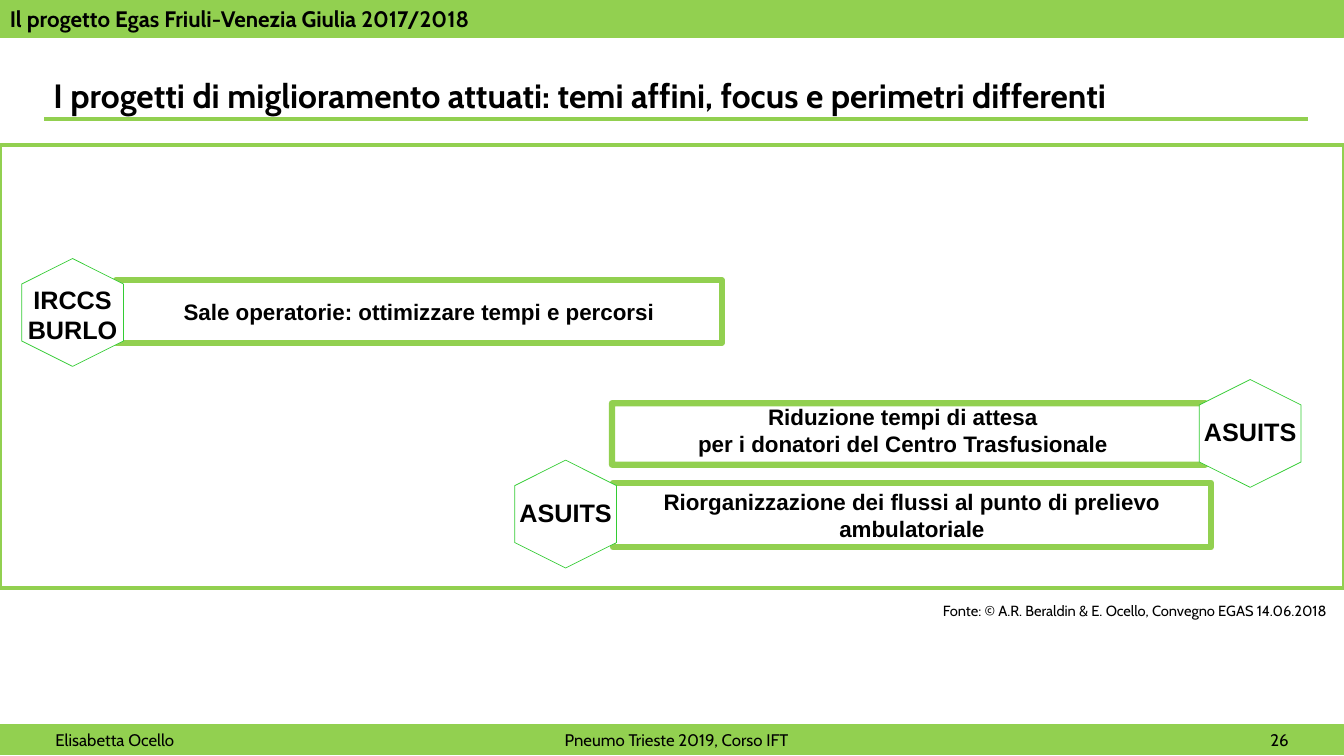
from lxml.etree import SubElement
from pptx import Presentation
from pptx.dml.color import RGBColor
from pptx.enum.shapes import MSO_CONNECTOR, MSO_SHAPE
from pptx.enum.text import MSO_ANCHOR, PP_ALIGN
from pptx.oxml.ns import qn
from pptx.util import Inches, Pt

GREEN = RGBColor(0x92, 0xD0, 0x50)
HEX_GREEN = RGBColor(0x33, 0xCC, 0x33)
WHITE = RGBColor(0xFF, 0xFF, 0xFF)
BLACK = RGBColor(0, 0, 0)

WIDTH, HEIGHT = 13.33, 7.5

# Content
HEADER = "Il progetto Egas Friuli-Venezia Giulia 2017/2018"
TITLE = "I progetti di miglioramento attuati: temi affini, focus e perimetri differenti"
SOURCE = "Fonte: © A.R. Beraldin & E. Ocello, Convegno EGAS 14.06.2018"
FOOTER = ["Elisabetta Ocello", "Pneumo Trieste 2019, Corso IFT", "26"]
FOOTER_COLUMNS = [0.55, 5.6, 12.6]

# Each project: outline, its box, text lines, text box,
# owner lines, hexagon centre, shift of the owner label
PROJECTS = [
    (MSO_SHAPE.PENTAGON, (6.07, 4, 6.19, 0.61),
     ["Riduzione tempi di attesa", "per i donatori del Centro Trasfusionale"],
     (5.96, 3.95, 5.99, 0.64), ["ASUITS"], (12.4, 4.3), -0.02),
    (MSO_SHAPE.RECTANGLE, (6.08, 4.79, 5.93, 0.64),
     ["Riorganizzazione dei flussi al punto di prelievo ambulatoriale"],
     None, ["ASUITS"], (5.61, 5.1), -0.02),
    (MSO_SHAPE.RECTANGLE, (1.15, 2.78, 6.01, 0.62),
     ["Sale operatorie: ottimizzare tempi e percorsi"],
     None, ["IRCCS", "BURLO"], (0.72, 3.1), 0.02),
]
HEXAGON = (1.07, 1.01)
LABEL = (1.21, 0.4)

PROJECT_TEXT = {"name": "Arial", "size": Pt(16), "bold": True}
OWNER_TEXT = {"name": "Arial", "size": Pt(18), "bold": True}
HEADER_TEXT = {"name": "Cabin", "size": Pt(16), "bold": True}
TITLE_TEXT = {"name": "Cabin", "size": Pt(24), "bold": True}
SOURCE_TEXT = {"name": "Cabin", "size": Pt(10.5), "bold": False}
FOOTER_TEXT = {"name": "Cabin", "size": Pt(12), "bold": False}

prs = Presentation()
prs.slide_width, prs.slide_height = Inches(WIDTH), Inches(HEIGHT)
slide = prs.slides.add_slide(prs.slide_layouts[6])


def centred(centre, size):
    return (centre[0] - size[0] / 2, centre[1] - size[1] / 2, *size)


def draw(kind, box, fill, line, weight):
    shape = slide.shapes.add_shape(kind, *map(Inches, box))
    shape.shadow.inherit = False
    if fill is None:
        shape.fill.background()
    else:
        shape.fill.solid()
        shape.fill.fore_color.rgb = fill
    shape.line.color.rgb = line
    shape.line.width = Pt(weight)
    return shape


def write(shape, lines, style, align=PP_ALIGN.LEFT, inset=0.1, tabs=()):
    frame = shape.text_frame
    frame.word_wrap = True
    frame.vertical_anchor = MSO_ANCHOR.MIDDLE
    frame.margin_left = Inches(inset)
    for number, line in enumerate(lines):
        paragraph = frame.add_paragraph() if number else frame.paragraphs[0]
        paragraph.alignment = align
        if tabs:
            stops = SubElement(paragraph._p.get_or_add_pPr(), qn("a:tabLst"))
            for tab in tabs:
                SubElement(stops, qn("a:tab"), pos=str(Inches(tab)), algn="l")
        run = paragraph.add_run()
        run.text = line
        run.font.color.rgb = BLACK
        for attribute, value in style.items():
            setattr(run.font, attribute, value)


def text_box(box):
    return slide.shapes.add_textbox(*map(Inches, box))


# Projects with their owners
for kind, box, topic, topic_box, owner, centre, shift in PROJECTS:
    bar = draw(kind, box, WHITE, GREEN, 4.5)
    write(text_box(topic_box) if topic_box else bar, topic, PROJECT_TEXT, PP_ALIGN.CENTER)
    draw(MSO_SHAPE.HEXAGON, centred(centre, HEXAGON), WHITE, HEX_GREEN, 0.5).rotation = 270
    label_size = (LABEL[0], LABEL[1] + 0.31 * (len(owner) - 1))
    label = text_box(centred((centre[0], centre[1] + shift), label_size))
    write(label, owner, OWNER_TEXT, PP_ALIGN.CENTER)

# Frame around the projects
draw(MSO_SHAPE.RECTANGLE, (0, 1.44, WIDTH, 4.39), None, GREEN, 3)

# Footer bar
footer = draw(MSO_SHAPE.RECTANGLE, (0, 7.19, WIDTH, 0.3), GREEN, GREEN, 0.75)
start = FOOTER_COLUMNS[0]
write(footer, ["\t".join(FOOTER)], FOOTER_TEXT, inset=start,
      tabs=[column - start for column in FOOTER_COLUMNS[1:]])

# Source line
source = draw(MSO_SHAPE.RECTANGLE, (8.99, 5.92, 4.27, 0.28), None, WHITE, 0.75)
write(source, [SOURCE], SOURCE_TEXT, PP_ALIGN.RIGHT)

# Title and its rule
write(text_box((0.35, 0.69, 12.62, 0.5)), [TITLE], TITLE_TEXT, inset=0.18)
rule = slide.shapes.add_connector(
    MSO_CONNECTOR.STRAIGHT, *map(Inches, (0.44, 1.18, 12.97, 1.18)))
rule.line.color.rgb = GREEN
rule.line.width = Pt(2.25)
SubElement(rule._element.spPr, qn("a:effectLst"))

# Header bar
header = draw(MSO_SHAPE.RECTANGLE, (0, 0, WIDTH, 0.37), GREEN, GREEN, 0.75)
write(header, [HEADER], HEADER_TEXT)

prs.save("out.pptx")
